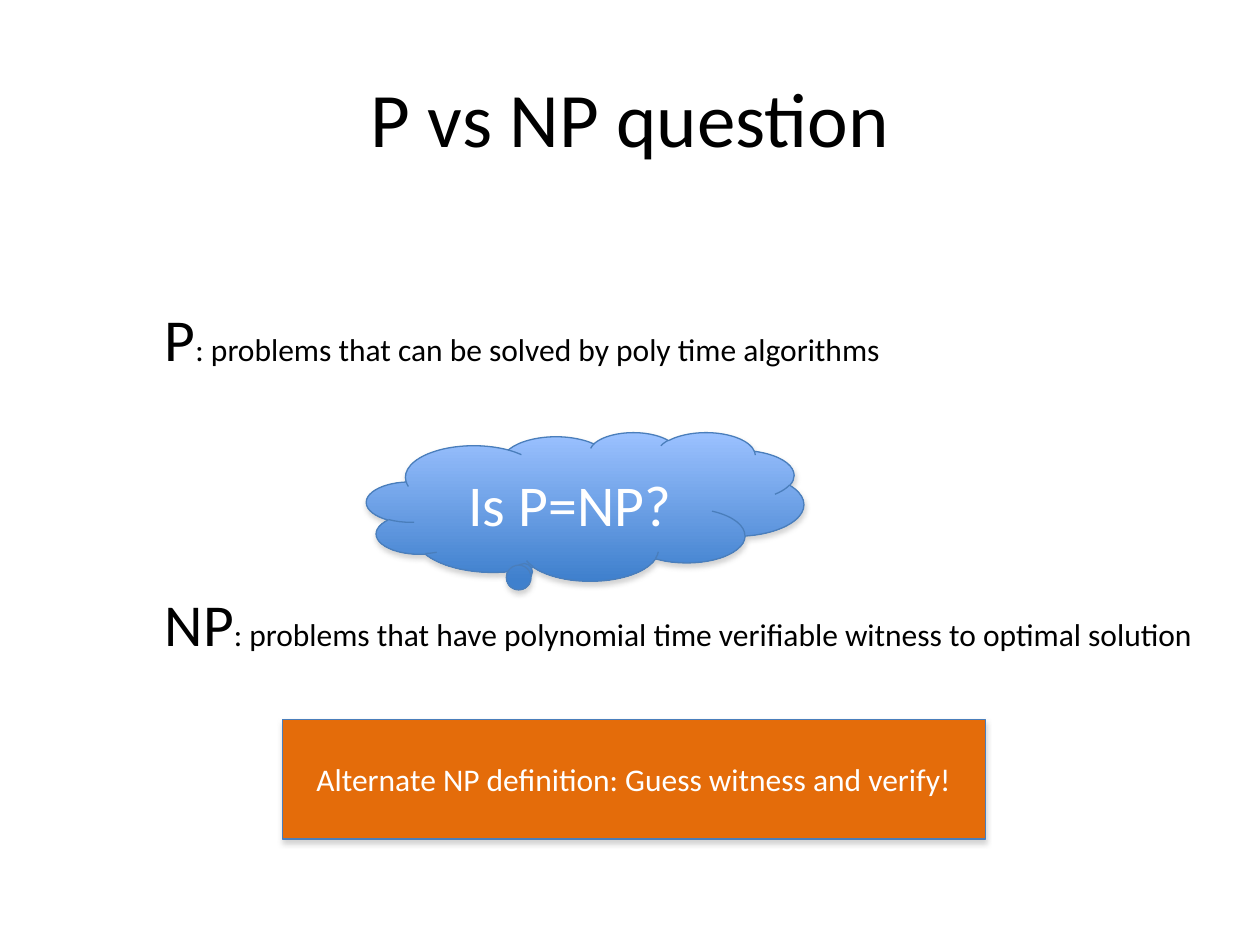
from dataclasses import dataclass

from lxml.etree import SubElement
from pptx import Presentation
from pptx.dml.color import RGBColor
from pptx.enum.shapes import MSO_SHAPE
from pptx.enum.text import MSO_ANCHOR, MSO_AUTO_SIZE, PP_ALIGN
from pptx.oxml.ns import qn
from pptx.util import Inches, Pt


@dataclass(frozen=True)
class Theme:
    """Colours and type sizes of the slide."""

    font: str = "Calibri"
    ink: str = "000000"
    light: str = "FFFFFF"
    outline: str = "4A7EBB"
    shadow: str = "808080"
    cloud_top: str = "9BC1FF"
    cloud_bottom: str = "3F80CD"
    accent: str = "E46C0A"
    title_size: int = 44
    term_size: int = 34
    question_size: int = 33
    body_size: int = 18


@dataclass(frozen=True)
class Box:
    """A rectangle in slide units."""

    left: int
    top: int
    width: int
    height: int

    def share(self, left, top, width, height):
        """Return a box given as shares of this one."""
        return Box(
            self.left + round(left * self.width),
            self.top + round(top * self.height),
            round(width * self.width),
            round(height * self.height),
        )

    @property
    def frame(self):
        """Return the four lengths in drawing order."""
        return self.left, self.top, self.width, self.height


THEME = Theme()


def style_run(run, size, color):
    """Give a run the theme font, a size and a colour."""
    run.font.name = THEME.font
    run.font.size = Pt(size)
    run.font.color.rgb = RGBColor.from_string(color)


def write_centred(holder, wording, size, color):
    """Write one line in the middle of a shape."""
    frame = holder.text_frame
    frame.word_wrap = True
    frame.vertical_anchor = MSO_ANCHOR.MIDDLE
    frame.text = wording
    line = frame.paragraphs[0]
    line.alignment = PP_ALIGN.CENTER
    style_run(line.runs[0], size, color)


def add_raised_shape(slide, preset, box):
    """Add a preset shape with the thin outline and soft shadow."""
    raised = slide.shapes.add_shape(preset, *box.frame)
    raised.line.color.rgb = RGBColor.from_string(THEME.outline)
    raised.line.width = Pt(0.75)
    raised.shadow.inherit = False
    effects = raised.element.spPr.find(qn("a:effectLst"))
    shadow = SubElement(
        effects, qn("a:outerShdw"), blurRad=str(Pt(3.1)), dist=str(Pt(1.8)),
        dir="5400000", rotWithShape="0",
    )
    tone = SubElement(shadow, qn("a:srgbClr"), val=THEME.shadow)
    SubElement(tone, qn("a:alpha"), val="35000")
    return raised


def add_title(slide, box, wording):
    """Place the slide title."""
    title = slide.shapes.add_textbox(*box.frame)
    write_centred(title, wording, THEME.title_size, THEME.ink)


def add_definition(slide, box, term, meaning):
    """Place a large term followed by its meaning."""
    definition = slide.shapes.add_textbox(*box.frame)
    frame = definition.text_frame
    frame.word_wrap = False
    frame.auto_size = MSO_AUTO_SIZE.SHAPE_TO_FIT_TEXT
    line = frame.paragraphs[0]
    for wording, size in ((term, THEME.term_size), (f": {meaning}", THEME.body_size)):
        run = line.add_run()
        run.text = wording
        style_run(run, size, THEME.ink)


def add_question(slide, box, wording):
    """Place the question in a shaded thought cloud."""
    cloud = add_raised_shape(slide, MSO_SHAPE.CLOUD_CALLOUT, box)
    cloud.adjustments[0], cloud.adjustments[1] = -0.14, 0.44
    cloud.fill.gradient()
    cloud.fill.gradient_angle = 270
    shades = (THEME.cloud_top, THEME.cloud_bottom)
    for stop, shade in zip(cloud.fill.gradient_stops, shades):
        stop.color.rgb = RGBColor.from_string(shade)
    write_centred(cloud, wording, THEME.question_size, THEME.light)


def add_banner(slide, box, wording):
    """Place the closing remark on a solid band."""
    banner = add_raised_shape(slide, MSO_SHAPE.RECTANGLE, box)
    banner.fill.solid()
    banner.fill.fore_color.rgb = RGBColor.from_string(THEME.accent)
    write_centred(banner, wording, THEME.body_size, THEME.light)


def build_question_slide(deck):
    """Build the slide that sets P against NP."""
    slide = deck.slides.add_slide(deck.slide_layouts[6])
    page = Box(0, 0, deck.slide_width, deck.slide_height)
    add_title(slide, page.share(0.05, 0.04, 0.9, 1 / 6), "P vs NP question")
    definitions = (
        (2.35 / 7.5, 0.59, "P", "problems that can be solved by poly time algorithms"),
        (4.61 / 7.5, 0.84, "NP",
         "problems that have polynomial time verifiable witness to optimal solution"),
    )
    for top, width, term, meaning in definitions:
        add_definition(slide, page.share(1.21 / 10, top, width, 0.09), term, meaning)
    add_question(
        slide, page.share(2.91 / 10, 3.43 / 7.5, 3.47 / 10, 1.18 / 7.5), "Is P=NP?"
    )
    add_banner(
        slide, page.share(2.24 / 10, 5.71 / 7.5, 5.58 / 10, 0.95 / 7.5),
        "Alternate NP definition: Guess witness and verify!",
    )


def main():
    """Create and save the deck."""
    deck = Presentation()
    deck.slide_width, deck.slide_height = Inches(10), Inches(7.5)
    build_question_slide(deck)
    deck.save("out.pptx")


if __name__ == "__main__":
    main()
